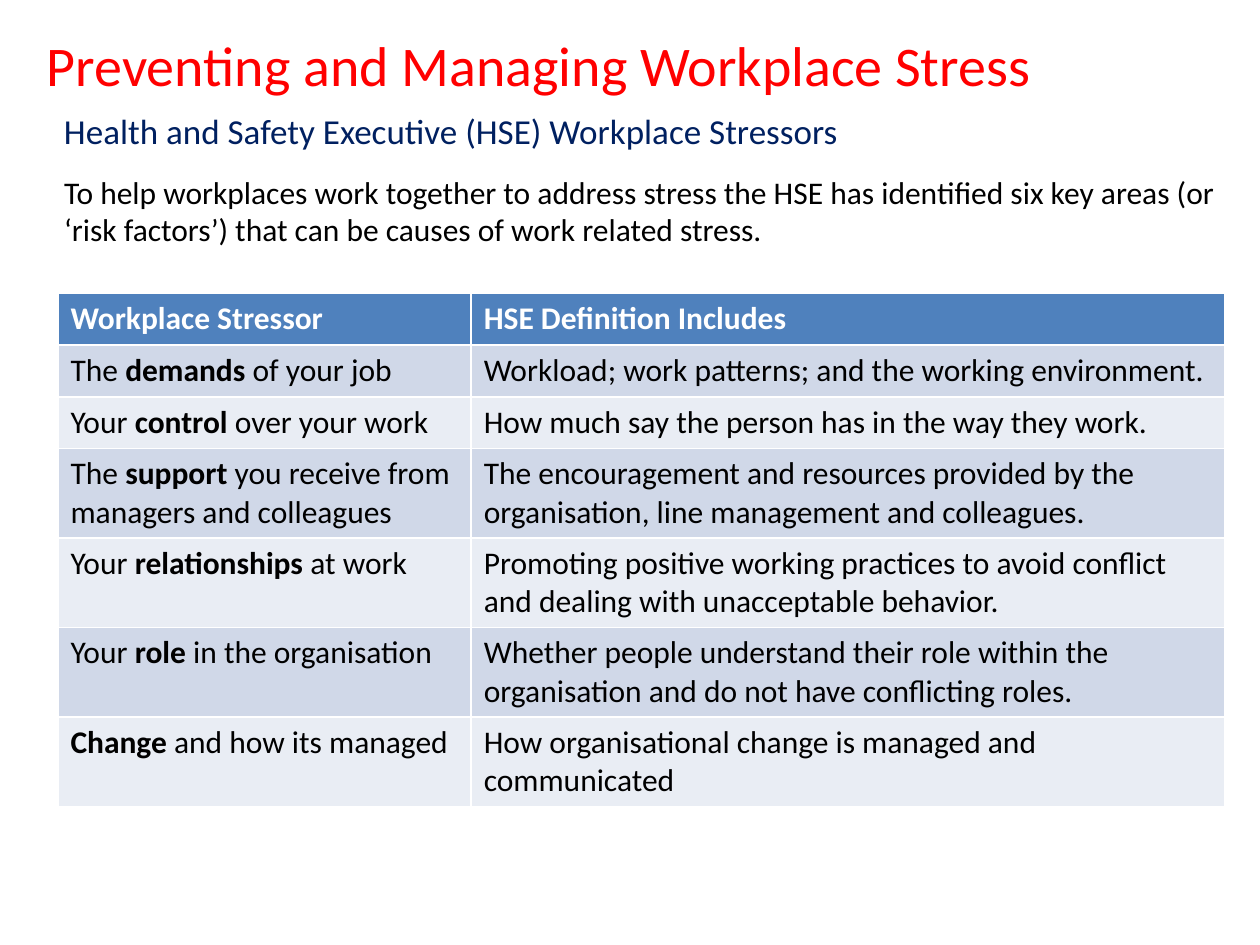
from dataclasses import dataclass

from pptx import Presentation
from pptx.dml.color import RGBColor
from pptx.enum.text import MSO_ANCHOR, MSO_AUTO_SIZE, PP_ALIGN
from pptx.util import Inches, Pt

LEFT, TOP, FIT = PP_ALIGN.LEFT, MSO_ANCHOR.TOP, MSO_AUTO_SIZE.NONE
WIDE, HIGH = 10, 7.5


@dataclass(frozen=True)
class Theme:
    font: str = "Calibri"
    title: str = "FF0000"
    sub: str = "002060"
    ink: str = "000000"
    white: str = "FFFFFF"
    head: str = "4F81BD"
    bands: tuple[str, str] = ("D0D8E8", "E9EDF4")
    big: int = 32
    mid: int = 20
    body: int = 18


@dataclass(frozen=True)
class Box:
    left: float
    top: float
    width: float
    height: float

    def place(self) -> tuple[int, ...]:
        return tuple(Inches(v) for v in (self.left, self.top, self.width, self.height))


@dataclass(frozen=True)
class Factor:
    lead: str
    key: str
    rest: str
    meaning: str
    lines: int = 1


THEME = Theme()
TITLE = Box(0.27, 0.19, 9.14, 0.64)
SUB = Box(0.41, 0.82, 7.13, 0.44)
INTRO = Box(0.41, 1.32, 9.35, 0.71)
GRID = Box(0.46, 2.33, 9.26, 4.03)
COLS = (3.28, 5.98)
ROWS = {1: 0.41, 2: 0.7}  # row height by number of text lines

HEADS = ("Workplace Stressor", "HSE Definition Includes")
FACTORS = (
    Factor("The ", "demands", " of your job",
           "Workload; work patterns; and the working environment."),
    Factor("Your ", "control ", "over your work",
           "How much say the person has in the way they work."),
    Factor("The ", "support", " you receive from managers and colleagues",
           "The encouragement and resources provided by the organisation, "
           "line management and colleagues.", 2),
    Factor("Your ", "relationships ", "at work",
           "Promoting positive working practices to avoid conflict and "
           "dealing with unacceptable behavior.", 2),
    Factor("Your ", "role", " in the organisation",
           "Whether people understand their role within the organisation "
           "and do not have conflicting roles.", 2),
    Factor("", "Change", " and how its managed",
           "How organisational change is managed and communicated", 2),
)


def style(para, size: int, color: str, bold: bool = False) -> None:
    para.alignment = LEFT
    font = para.font
    font.name, font.size, font.bold = THEME.font, Pt(size), bold
    font.color.rgb = RGBColor.from_string(color)


def write(shape, box: Box, text: str, size: int, color: str, wrap: bool) -> None:
    shape.left, shape.top, shape.width, shape.height = box.place()
    frame = shape.text_frame
    frame.text = text
    frame.word_wrap, frame.auto_size = wrap, FIT
    frame.vertical_anchor = TOP
    style(frame.paragraphs[0], size, color)


def fill_cell(cell, parts: tuple[str, ...], fill: str, color: str,
              bold: bool = False) -> None:
    """Write the parts as runs; of several, the second is the bold key word."""
    cell.fill.solid()
    cell.fill.fore_color.rgb = RGBColor.from_string(fill)
    para = cell.text_frame.paragraphs[0]
    style(para, THEME.body, color, bold)
    for i, part in enumerate(parts):
        if part:
            run = para.add_run()
            run.text = part
            run.font.bold = bold or i == 1


def draw_table(slide) -> None:
    table = slide.shapes.add_table(len(FACTORS) + 1, len(COLS), *GRID.place()).table
    for col, width in zip(table.columns, COLS):
        col.width = Inches(width)

    # Header row
    table.rows[0].height = Inches(ROWS[1])
    for i, head in enumerate(HEADS):
        fill_cell(table.cell(0, i), (head,), THEME.head, THEME.white, True)

    # One row for each risk factor
    for i, item in enumerate(FACTORS, 1):
        table.rows[i].height = Inches(ROWS[item.lines])
        band = THEME.bands[(i - 1) % 2]
        fill_cell(table.cell(i, 0), (item.lead, item.key, item.rest), band, THEME.ink)
        fill_cell(table.cell(i, 1), (item.meaning,), band, THEME.ink)


def main() -> None:
    deck = Presentation()
    deck.slide_width, deck.slide_height = Inches(WIDE), Inches(HIGH)
    slide = deck.slides.add_slide(deck.slide_layouts[5])

    # Title, subtitle and introduction
    write(slide.shapes.title, TITLE, "Preventing and Managing Workplace Stress",
          THEME.big, THEME.title, False)
    write(slide.shapes.add_textbox(*SUB.place()), SUB,
          "Health and Safety Executive (HSE) Workplace Stressors",
          THEME.mid, THEME.sub, False)
    write(slide.shapes.add_textbox(*INTRO.place()), INTRO,
          "To help workplaces work together to address stress the HSE has identified "
          "six key areas (or ‘risk factors’) that can be causes of work related stress.",
          THEME.body, THEME.ink, True)

    draw_table(slide)
    deck.save("out.pptx")


if __name__ == "__main__":
    main()
